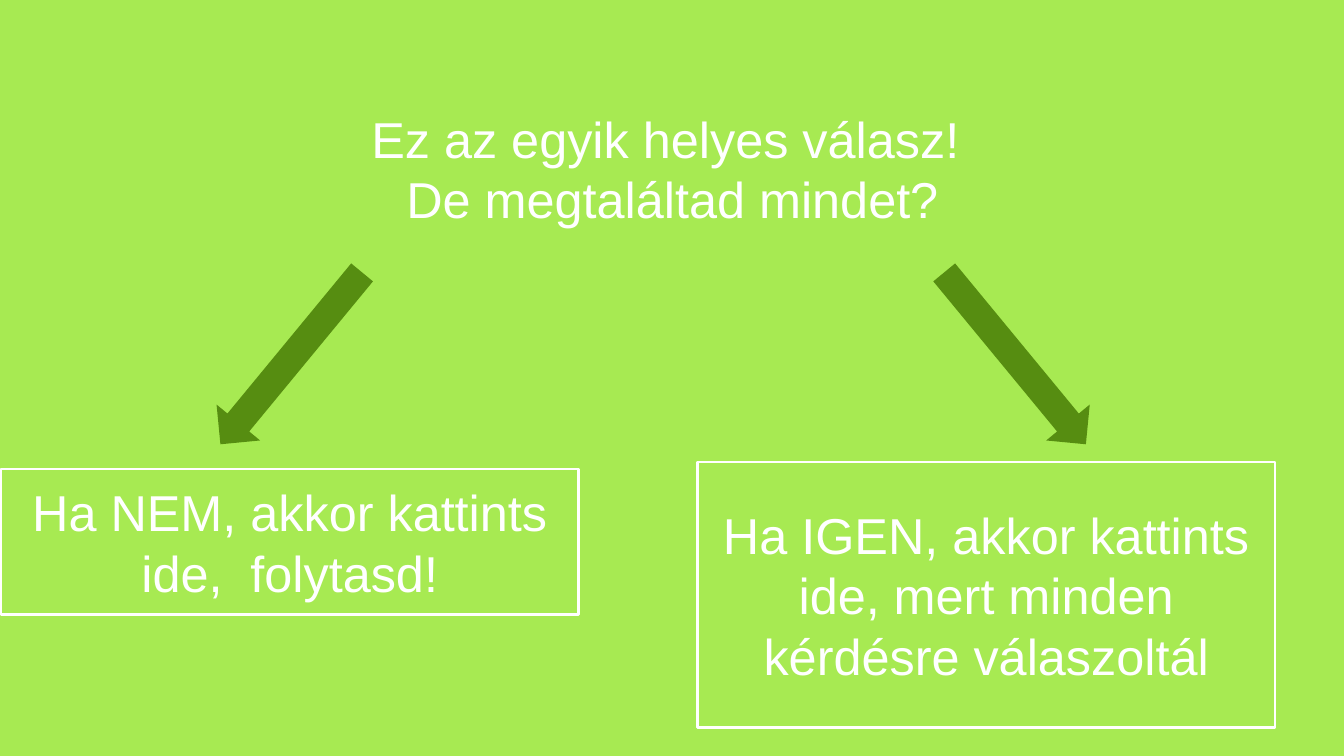
from pptx import Presentation
from pptx.dml.color import RGBColor
from pptx.enum.shapes import MSO_SHAPE
from pptx.enum.text import MSO_ANCHOR, PP_ALIGN
from pptx.util import Pt

WIDTH, HEIGHT = 960, 540
COLORS = {"lime": "A7EA52", "green": "568D11", "white": "FFFFFF"}

# text lines, (left, top, width, height), fill, border width
BOXES = [
    (["Ez az egyik helyes válasz! ", "De megtaláltad mindet?"],
     (254.2, 45.4, 452.2, 149.8), "lime", None),
    (["Ha NEM, akkor kattints ide,  folytasd!"],
     (0.7, 335, 412.6, 104), "lime", 2),
    (["Ha IGEN, akkor kattints ide, mert minden kérdésre válaszoltál"],
     (498.2, 329.8, 412.6, 190), None, 1.75),
]
ARROW_TOP, ARROW_WIDTH, ARROW_HEIGHT = 176.4, 40.3, 159.1
ARROWS = [(187.9, 39.5), (704.9, -39.5)]  # left, rotation


def color(name):
    return RGBColor.from_string(COLORS[name])


def add_shape(slide, kind, place, fill=None, border=None):
    shape = slide.shapes.add_shape(kind, *map(Pt, place))
    shape.shadow.inherit = False
    if fill:
        shape.fill.solid()
        shape.fill.fore_color.rgb = color(fill)
    else:
        shape.fill.background()
    if border:
        shape.line.color.rgb = color("white")
        shape.line.width = Pt(border)
    else:
        shape.line.fill.background()
    return shape


def write(shape, lines, size=36, font="Arial", ink="white", align=PP_ALIGN.CENTER):
    frame = shape.text_frame
    frame.word_wrap = True
    frame.vertical_anchor = MSO_ANCHOR.MIDDLE
    frame.text = "\n".join(lines)
    for para in frame.paragraphs:
        para.alignment = align
        for run in para.runs:
            run.font.size = Pt(size)
            run.font.name = font
            run.font.color.rgb = color(ink)


def main():
    deck = Presentation()
    deck.slide_width, deck.slide_height = Pt(WIDTH), Pt(HEIGHT)
    slide = deck.slides.add_slide(deck.slide_layouts[6])
    slide.background.fill.solid()
    slide.background.fill.fore_color.rgb = color("lime")

    for lines, place, fill, border in BOXES:
        write(add_shape(slide, MSO_SHAPE.RECTANGLE, place, fill, border), lines)
    for left, turn in ARROWS:
        place = (left, ARROW_TOP, ARROW_WIDTH, ARROW_HEIGHT)
        add_shape(slide, MSO_SHAPE.DOWN_ARROW, place, "green").rotation = turn

    deck.save("out.pptx")


if __name__ == "__main__":
    main()
